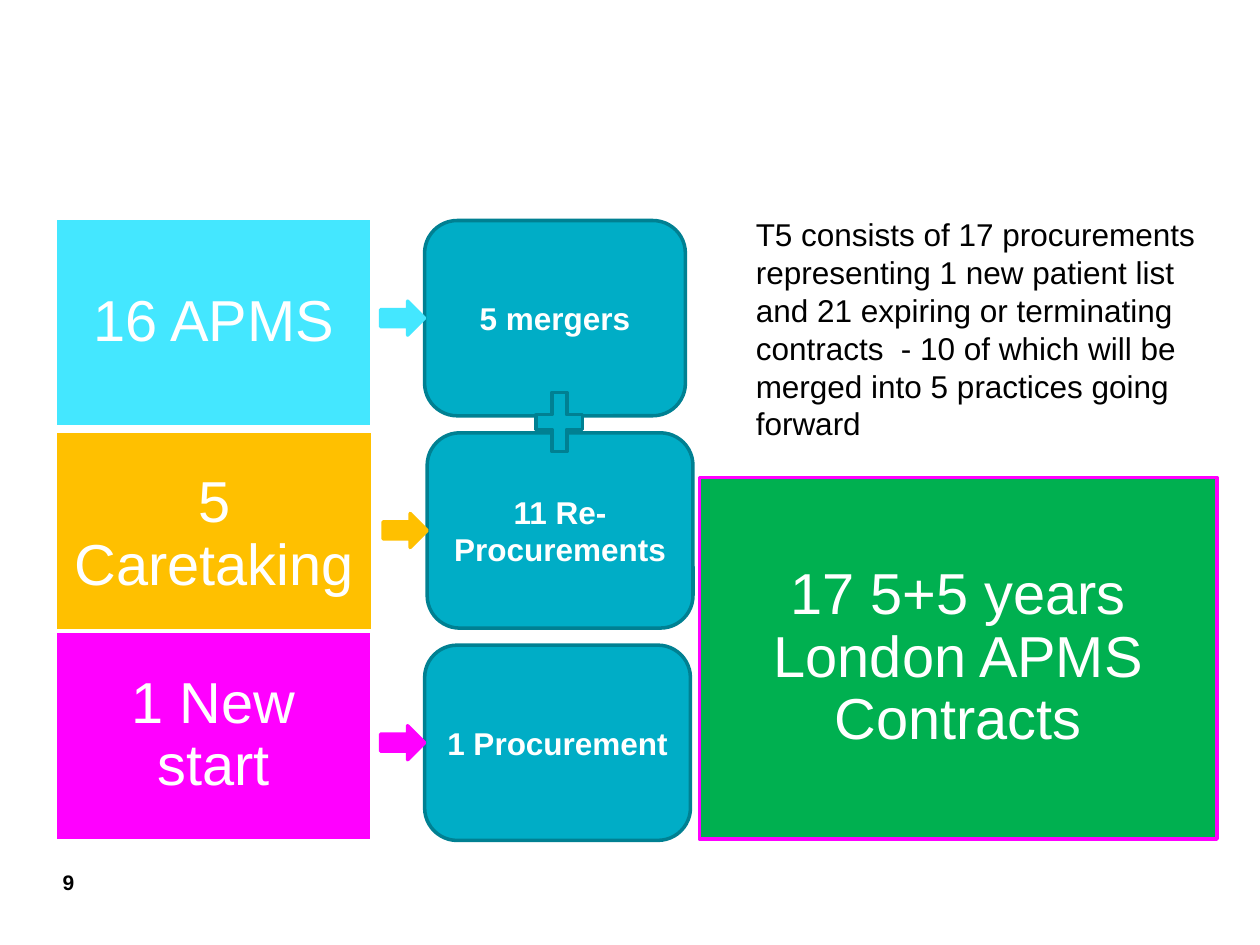
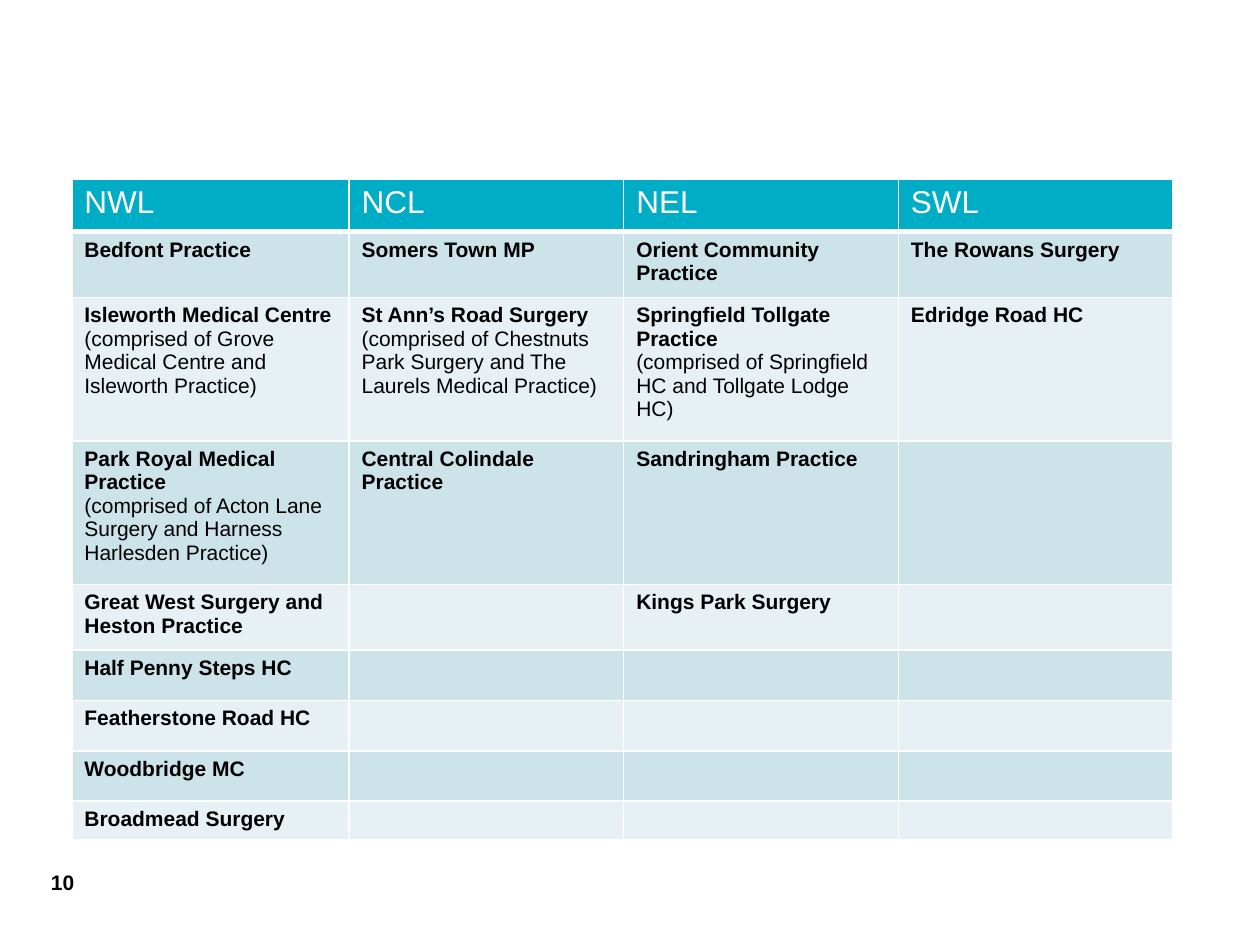
from pptx import Presentation
from pptx.dml.color import RGBColor
from pptx.enum.shapes import MSO_SHAPE as Shape
from pptx.enum.text import MSO_ANCHOR as Anchor, PP_ALIGN as Align
from pptx.oxml.xmlchemy import OxmlElement as Element
from pptx.util import Inches, Pt

COLUMNS, ROWS = 100, 75
WHITE = RGBColor(0xFF, 0xFF, 0xFF)
BLACK = RGBColor(0x00, 0x00, 0x00)
TEAL = RGBColor(0x00, 0xAD, 0xC6)
DARK_TEAL = RGBColor(0x00, 0x80, 0x92)
CYAN = RGBColor(0x44, 0xE7, 0xFF)
AMBER = RGBColor(0xFF, 0xC0, 0x00)
MAGENTA = RGBColor(0xFF, 0x00, 0xFF)
GREEN = RGBColor(0x00, 0xB0, 0x50)
BANDS = (RGBColor(0xE7, 0xF1, 0xF5), RGBColor(0xCC, 0xE3, 0xEA))

FONTS = {
    "tile": (WHITE, {"size": Pt(33), "bold": False}),
    "step": (WHITE, {"size": Pt(18), "bold": True}),
    "body": (BLACK, {"size": Pt(18), "bold": False}),
    "number": (BLACK, {"size": Pt(12), "bold": True}),
    "header": (WHITE, {"size": Pt(18), "bold": False}),
    "practice": (BLACK, {"size": Pt(12), "bold": True}),
    "detail": (BLACK, {"size": Pt(12), "bold": False}),
}
PARAGRAPHS = {
    "tile": {"alignment": Align.CENTER, "line_spacing": 0.9},
    "step": {"alignment": Align.CENTER},
    "number": {"alignment": Align.RIGHT},
}
FRAMES = {
    "tile": {"vertical_anchor": Anchor.MIDDLE, "margin_left": Inches(0.14), "margin_right": Inches(0.14),
             "margin_top": Inches(0.14), "margin_bottom": Inches(0.14)},
    "step": {"vertical_anchor": Anchor.MIDDLE},
    "number": {"vertical_anchor": Anchor.BOTTOM, "margin_left": 0, "margin_right": 0,
               "margin_top": 0, "margin_bottom": 0},
}

TILES = [
    ("16 APMS", CYAN, (4.4, 17.3, 25.1, 16.6)),
    ("5 Caretaking", AMBER, (4.4, 34.2, 25.2, 16.6)),
    ("1 New start", MAGENTA, (4.4, 50.1, 25.1, 16.6)),
]
STEPS = [
    ("5 mergers", 33.7, 20.7),
    ("11 Re-Procurements", 33.9, 21.1),
    ("1 Procurement", 33.7, 21.1),
]
STEP_TOP, STEP_PITCH, STEP_HEIGHT = 17.5, 16.85, 15.5
ARROW_WIDTH, ARROW_HEIGHT = 3.5, 2.7
SUMMARY = ("T5 consists of 17 procurements representing 1 new patient list and 21 expiring or terminating "
           "contracts  - 10 of which will be merged into 5 practices going forward")

REGIONS = ["NWL", "NCL", "NEL", "SWL"]
PRACTICES = [
    ["Bedfont Practice", "Somers Town MP", "Orient Community Practice", "The Rowans Surgery"],
    ["Isleworth Medical Centre\n(comprised of Grove Medical Centre and Isleworth Practice)",
     "St Ann’s Road Surgery\n(comprised of Chestnuts Park Surgery and The Laurels Medical Practice)",
     "Springfield Tollgate Practice\n(comprised of Springfield HC and Tollgate Lodge HC)",
     "Edridge Road HC"],
    ["Park Royal Medical Practice\n(comprised of Acton Lane Surgery and Harness Harlesden Practice)",
     "Central Colindale Practice", "Sandringham Practice", ""],
    ["Great West Surgery and Heston Practice", "", "Kings Park Surgery", ""],
    ["Half Penny Steps HC", "", "", ""],
    ["Featherstone Road HC", "", "", ""],
    ["Woodbridge MC", "", "", ""],
    ["Broadmead Surgery", "", "", ""],
]
COLUMN_WIDTHS = [22, 21.8, 21.8, 21.8]
ROW_HEIGHTS = [4.2, 5.2, 11.4, 11.4, 5.2, 4, 4, 4, 3.1]


def apply(target, values):
    """Set each named attribute of the target."""
    for name, value in values.items():
        setattr(target, name, value)


class Deck:
    """Hold the presentation, its grid and the current slide."""

    def __init__(self):
        """Start a 4:3 presentation and measure its grid."""
        self.presentation = Presentation()
        apply(self.presentation, {"slide_width": Inches(10), "slide_height": Inches(7.5)})
        self.column = self.presentation.slide_width / COLUMNS
        self.row = self.presentation.slide_height / ROWS
        self.slide = None

    def place(self, box):
        """Turn grid left, top, width and height into lengths."""
        units = (self.column, self.row) * 2
        return [round(value * unit) for value, unit in zip(box, units)]

    def new_slide(self, number):
        """Add a blank slide with its page number."""
        self.slide = self.presentation.slides.add_slide(self.presentation.slide_layouts[6])
        self.text(str(number), (2.6, 69, 3.3, 2), "number")

    def style_text(self, paragraph, text, style):
        """Put styled text in a paragraph."""
        apply(paragraph, PARAGRAPHS.get(style, {}))
        run = paragraph.add_run()
        run.text = text
        color, values = FONTS[style]
        apply(run.font, {"name": "Arial", **values})
        run.font.color.rgb = color

    def fill_frame(self, frame, text, style):
        """Format a text frame and set its text."""
        apply(frame, {"word_wrap": True, **FRAMES.get(style, {})})
        self.style_text(frame.paragraphs[0], text, style)

    def text(self, text, box, style):
        """Add a text box."""
        self.fill_frame(self.slide.shapes.add_textbox(*self.place(box)).text_frame, text, style)

    def shape(self, kind, box, fill, line, text="", style="step"):
        """Add a filled and outlined shape, with text if given."""
        shape = self.slide.shapes.add_shape(kind, *self.place(box))
        shape.shadow.inherit = False
        shape.fill.solid()
        shape.fill.fore_color.rgb = fill
        shape.line.color.rgb = line
        shape.line.width = Pt(2)
        if text:
            self.fill_frame(shape.text_frame, text, style)

    def borders(self, cell, bottom):
        """Draw white cell borders with the given bottom width."""
        properties = cell._tc.get_or_add_tcPr()
        for side, width in (("L", 1), ("R", 1), ("T", 1), ("B", bottom)):
            line = Element(f"a:ln{side}")
            line.set("w", str(Pt(width)))
            fill = Element("a:solidFill")
            color = Element("a:srgbClr")
            color.set("val", str(WHITE))
            fill.append(color)
            line.append(fill)
            properties.append(line)

    def cell(self, cell, text, fill, styles, bottom):
        """Fill one table cell, one style per line of text."""
        self.borders(cell, bottom)
        cell.fill.solid()
        cell.fill.fore_color.rgb = fill
        frame = cell.text_frame
        if not text:
            end = Element("a:endParaRPr")
            end.set("sz", "1200")
            frame.paragraphs[0]._p.append(end)
            return
        for index, (line, style) in enumerate(zip(text.split("\n"), styles)):
            paragraph = frame.add_paragraph() if index else frame.paragraphs[0]
            self.style_text(paragraph, line, style)

    def table(self, left, top, header, body):
        """Add a table with a header row and two alternating bands."""
        box = (left, top, sum(COLUMN_WIDTHS), sum(ROW_HEIGHTS))
        table = self.slide.shapes.add_table(len(body) + 1, len(header), *self.place(box)).table
        for column, width in zip(table.columns, COLUMN_WIDTHS):
            column.width = round(width * self.column)
        for row, height in zip(table.rows, ROW_HEIGHTS):
            row.height = round(height * self.row)
        for r, texts in enumerate([header, *body]):
            fill = BANDS[r % 2] if r else TEAL
            styles = ("practice", "detail") if r else ("header",)
            for c, text in enumerate(texts):
                self.cell(table.cell(r, c), text, fill, styles, 1 if r else 3)


def build_procurements(deck):
    """Show how current contracts lead to procurements."""
    deck.new_slide(9)
    for text, color, box in TILES:
        deck.shape(Shape.RECTANGLE, box, color, WHITE, text, "tile")
    deck.shape(Shape.RECTANGLE, (55.5, 37.9, 41.1, 28.7), GREEN, MAGENTA,
               "17 5+5 years London APMS Contracts", "tile")
    for index, (text, left, width) in enumerate(STEPS):
        top = STEP_TOP + index * STEP_PITCH
        deck.shape(Shape.ROUNDED_RECTANGLE, (left, top, width, STEP_HEIGHT), TEAL, DARK_TEAL, text)
        color = TILES[index][1]
        arrow_top = top + (STEP_HEIGHT - ARROW_HEIGHT) / 2
        deck.shape(Shape.RIGHT_ARROW, (left - ARROW_WIDTH, arrow_top, ARROW_WIDTH, ARROW_HEIGHT), color, color)
    deck.text(SUMMARY, (59, 16.6, 37.5, 19.2), "body")
    deck.shape(Shape.MATH_PLUS, (41.9, 30.3, 5, 6.4), TEAL, DARK_TEAL)


def build_practices(deck):
    """List the practices by region."""
    deck.new_slide(10)
    deck.table(5.7, 14.2, REGIONS, PRACTICES)


def main():
    """Build and save both slides."""
    deck = Deck()
    build_procurements(deck)
    build_practices(deck)
    deck.presentation.save("out.pptx")


if __name__ == "__main__":
    main()
